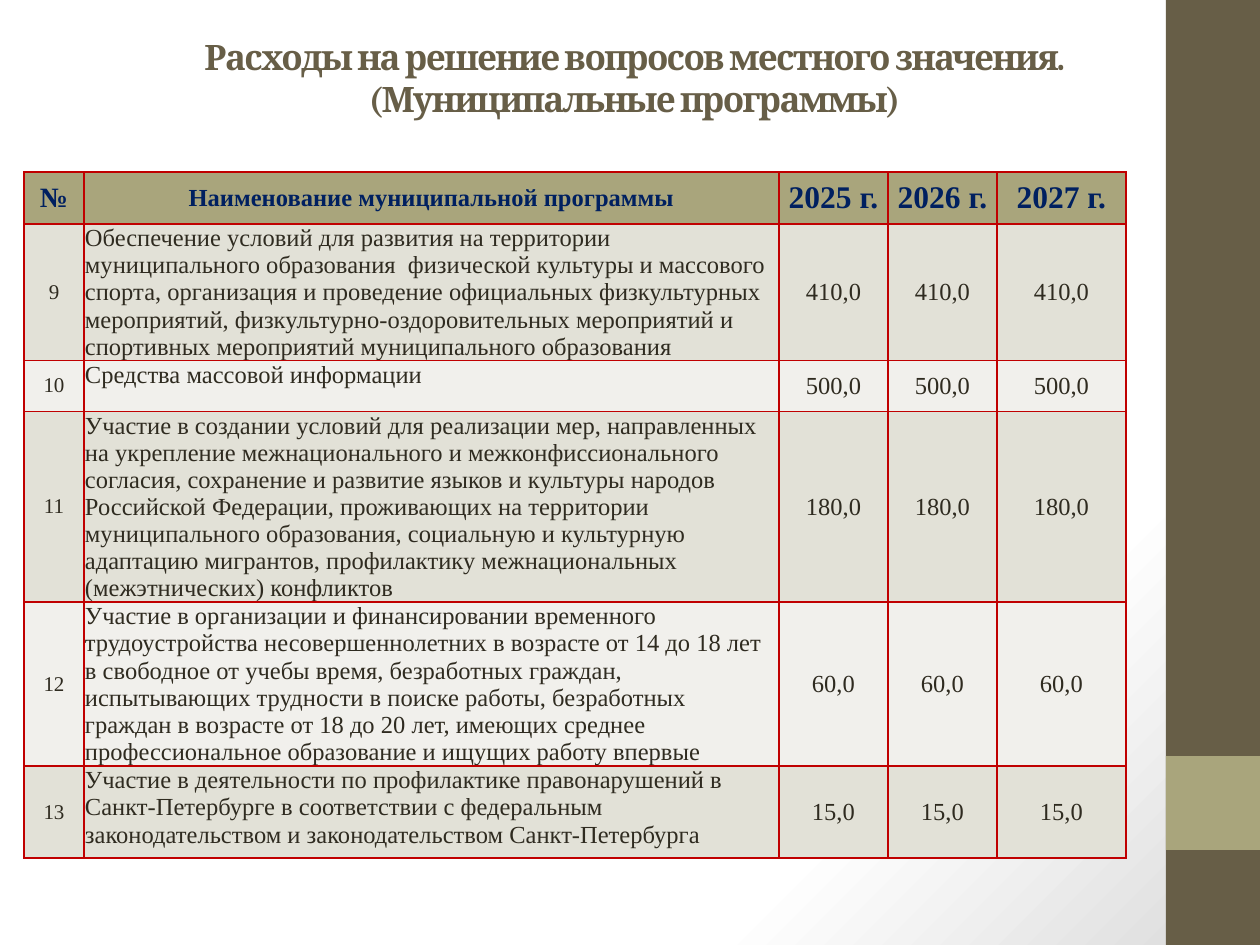
from dataclasses import dataclass

from lxml import etree
from pptx import Presentation
from pptx.dml.color import RGBColor
from pptx.enum.shapes import MSO_SHAPE
from pptx.enum.text import MSO_ANCHOR, PP_ALIGN
from pptx.oxml.ns import qn
from pptx.util import Emu, Pt

RECTANGLE = MSO_SHAPE.RECTANGLE
LEFT, CENTER = PP_ALIGN.LEFT, PP_ALIGN.CENTER
TOP, MIDDLE, BOTTOM = MSO_ANCHOR.TOP, MSO_ANCHOR.MIDDLE, MSO_ANCHOR.BOTTOM
EMU_PER_PX = 914400 / 126


@dataclass(frozen=True)
class Theme:
    heading_font: str = "Cambria"
    body_font: str = "Times New Roman"
    brown: str = "675E47"
    olive: str = "A9A57C"
    navy: str = "002060"
    ink: str = "2F2B20"
    border: str = "C00000"
    bands: tuple = ("E2E1D7", "F1F0EC")
    white: str = "FFFFFF"
    grey: str = "DADADA"
    title_size: int = 20
    year_size: int = 18
    number_head_size: int = 16
    body_size: int = 14
    number_size: int = 12


THEME = Theme()
TITLE = "Расходы на решение вопросов местного значения.\v(Муниципальные программы)"
HEADERS = ("№", "Наименование муниципальной программы", "2025 г.", "2026 г.", "2027 г.")
HEADER_SIZES = (THEME.number_head_size, THEME.body_size) + (THEME.year_size,) * 3
COLUMN_WIDTHS = (60, 695, 109, 109, 129)
HEADER_HEIGHT = 52
PROGRAMMES = (
    ("9", "Обеспечение условий для развития на территории муниципального образования  "
     "физической культуры и массового спорта, организация и проведение официальных "
     "физкультурных мероприятий, физкультурно-оздоровительных мероприятий и спортивных "
     "мероприятий муниципального образования", ("410,0",) * 3, 136),
    ("10", "Средства массовой информации", ("500,0",) * 3, 51),
    ("11", "Участие в создании условий для реализации мер, направленных на укрепление "
     "межнационального и межконфиссионального согласия, сохранение и развитие языков и "
     "культуры народов Российской Федерации, проживающих на территории муниципального "
     "образования, социальную и культурную  адаптацию мигрантов, профилактику "
     "межнациональных (межэтнических) конфликтов", ("180,0",) * 3, 190),
    ("12", "Участие в организации и финансировании временного трудоустройства "
     "несовершеннолетних в возрасте от 14 до 18 лет  в свободное от учебы время, "
     "безработных граждан, испытывающих трудности в поиске работы, безработных граждан "
     "в возрасте от 18 до 20 лет, имеющих среднее профессиональное образование и ищущих "
     "работу впервые", ("60,0",) * 3, 164),
    ("13", "Участие в деятельности по профилактике правонарушений в Санкт-Петербурге в "
     "соответствии с федеральным законодательством и законодательством Санкт-Петербурга",
     ("15,0",) * 3, 92),
)


def px(length):
    return Emu(round(length * EMU_PER_PX))


def color(value):
    return RGBColor.from_string(value)


def write_text(text_frame, text, size, font=THEME.body_font, ink=THEME.ink, bold=False,
               align=CENTER, spacing=None):
    text_frame.text = text
    paragraph = text_frame.paragraphs[0]
    paragraph.alignment = align
    for run in paragraph.runs:
        run.font.name = font
        run.font.size = Pt(size)
        run.font.bold = bold
        run.font.color.rgb = color(ink)
        if spacing is not None:
            run.font._element.set("spc", str(spacing))


def paint_background(slide):
    fill = slide.background.fill
    fill.gradient()
    fill.gradient_angle = 315
    stops = ((0.75, THEME.white), (1, THEME.grey))
    for stop, (position, value) in zip(fill.gradient_stops, stops):
        stop.position = position
        stop.color.rgb = color(value)


def add_block(slide, left, top, width, height, fill):
    shape = slide.shapes.add_shape(RECTANGLE, px(left), px(top), px(width), px(height))
    shape.shadow.inherit = False
    shape.fill.solid()
    shape.fill.fore_color.rgb = color(fill)
    shape.line.fill.background()


def place_title(slide):
    title = slide.shapes.title
    title.left, title.top, title.width, title.height = px(184), px(16), px(901), px(110)
    title.text_frame.word_wrap = True
    title.text_frame.vertical_anchor = BOTTOM
    write_text(title.text_frame, TITLE, THEME.title_size, font=THEME.heading_font,
               ink=THEME.brown, bold=True, spacing=-100)


def add_borders(cell):
    properties = cell._tc.get_or_add_tcPr()
    for index, side in enumerate(("a:lnL", "a:lnR", "a:lnT", "a:lnB")):
        line = etree.Element(qn(side), w=str(Pt(1)))
        fill = etree.SubElement(line, qn("a:solidFill"))
        etree.SubElement(fill, qn("a:srgbClr"), val=THEME.border)
        properties.insert(index, line)


def format_cell(cell, text, size, fill, margins=(13, 6, 13, 6), anchor=MIDDLE, **text_format):
    cell.fill.solid()
    cell.fill.fore_color.rgb = color(fill)
    cell.vertical_anchor = anchor
    cell.margin_left, cell.margin_top, cell.margin_right, cell.margin_bottom = map(px, margins)
    write_text(cell.text_frame, text, size, **text_format)
    add_borders(cell)


def add_programme_table(slide):
    heights = [HEADER_HEIGHT] + [programme[-1] for programme in PROGRAMMES]
    frame = slide.shapes.add_table(len(heights), len(COLUMN_WIDTHS), px(24), px(172),
                                   px(sum(COLUMN_WIDTHS)), px(sum(heights)))
    table = frame.table
    for column, width in zip(table.columns, COLUMN_WIDTHS):
        column.width = px(width)
    for row, height in zip(table.rows, heights):
        row.height = px(height)
    for column, (text, size) in enumerate(zip(HEADERS, HEADER_SIZES)):
        format_cell(table.cell(0, column), text, size, THEME.olive, margins=(6, 0, 6, 0),
                    ink=THEME.navy, bold=True)
    for row, (number, name, amounts, _) in enumerate(PROGRAMMES, start=1):
        band = THEME.bands[(row - 1) % 2]
        format_cell(table.cell(row, 0), number, THEME.number_size, band)
        format_cell(table.cell(row, 1), name, THEME.body_size, band, margins=(1, 1, 1, 0),
                    anchor=TOP, align=LEFT)
        for column, amount in enumerate(amounts, start=2):
            format_cell(table.cell(row, column), amount, THEME.body_size, band)


def main():
    presentation = Presentation()
    presentation.slide_width, presentation.slide_height = px(1260), px(945)
    slide = presentation.slides.add_slide(presentation.slide_layouts[5])
    paint_background(slide)
    add_block(slide, 1166, 0, 94, 945, THEME.brown)
    add_block(slide, 1166, 756, 94, 94, THEME.olive)
    place_title(slide)
    add_programme_table(slide)
    presentation.save("out.pptx")


if __name__ == "__main__":
    main()
